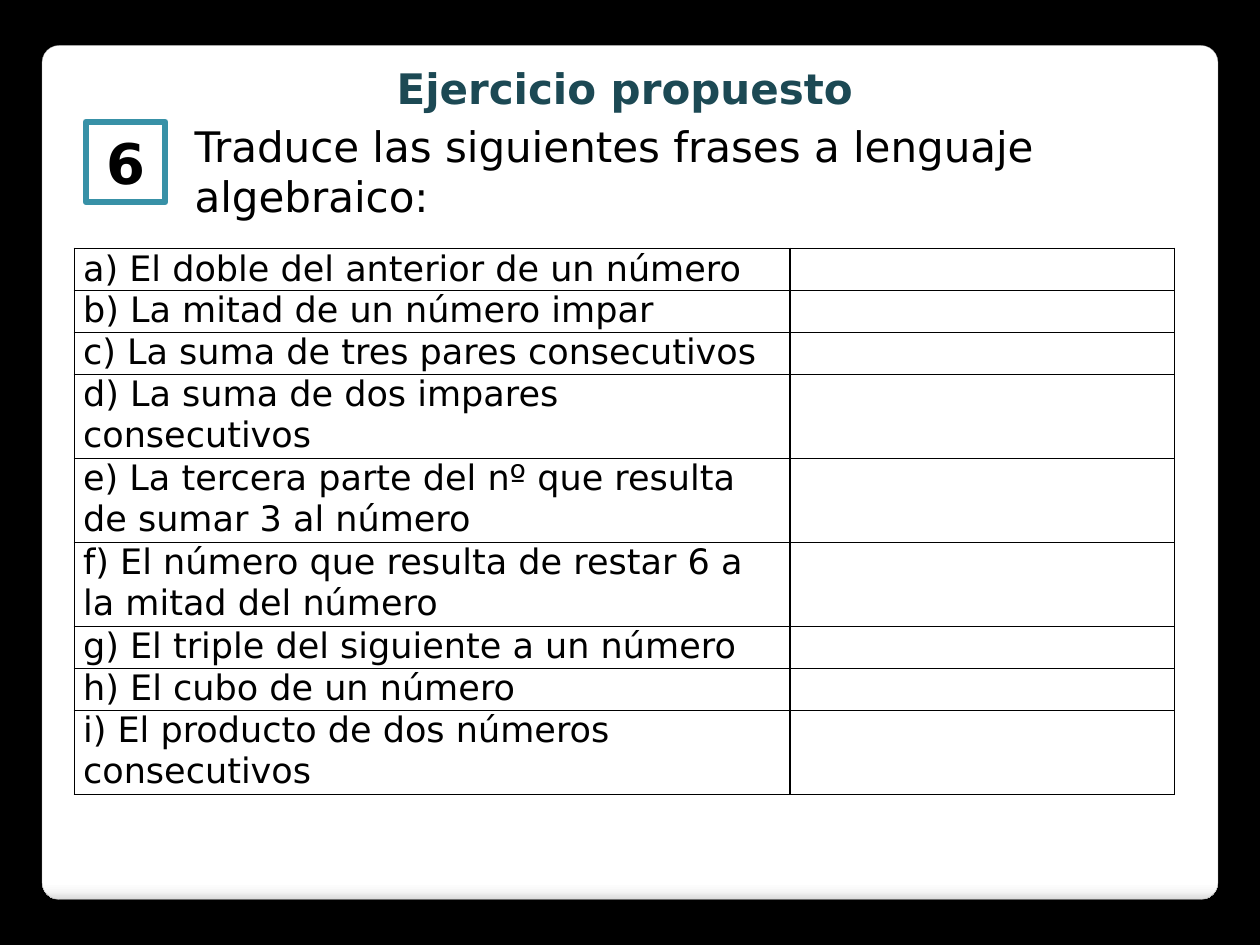
from lxml.etree import SubElement as Sub
from pptx import Presentation
from pptx.dml.color import RGBColor
from pptx.enum.shapes import MSO_SHAPE as Shape
from pptx.enum.text import MSO_ANCHOR as Anchor, MSO_AUTO_SIZE as AutoSize, PP_ALIGN as Align
from pptx.oxml.ns import qn
from pptx.util import Pt

BLACK, WHITE, TEAL, DARK_TEAL = "000000", "FFFFFF", "3891A7", "1C4954"

PHRASES = [
    "a) El doble del anterior de un número",
    "b) La mitad de un número impar",
    "c) La suma de tres pares consecutivos",
    "d) La suma de dos impares consecutivos",
    "e) La tercera parte del nº que resulta de sumar 3 al número",
    "f) El número que resulta de restar 6 a la mitad del número",
    "g) El triple del siguiente a un número",
    "h) El cubo de un número",
    "i) El producto de dos números consecutivos",
]
TWO_LINES = "defi"
LINE_HEIGHT = 24


def color(value):
    return RGBColor.from_string(value)


def place(box, left, top, width, height):
    box.left, box.top, box.width, box.height = map(Pt, (left, top, width, height))


def write(frame, text, size=24, ink=BLACK, bold=False, align=Align.LEFT, space=0):
    frame.word_wrap = True
    para = frame.paragraphs[0]
    para.alignment = align
    para.space_before = para.space_after = Pt(space)
    span = para.add_run()
    span.text = text
    span.font.name, span.font.size, span.font.bold = "DejaVu Sans", Pt(size), bold
    span.font.color.rgb = color(ink)
    return para


class Builder:
    def __init__(self, deck):
        self.page = deck.slides.add_slide(deck.slide_layouts[1])
        background = self.page.background.fill
        background.solid()
        background.fore_color.rgb = color(BLACK)

    def shape(self, kind, frame, line, weight):
        box = self.page.shapes.add_shape(kind, *map(Pt, frame))
        box.shadow.inherit = False
        box.fill.solid()
        box.fill.fore_color.rgb = color(WHITE)
        box.line.color.rgb = color(line)
        box.line.width = Pt(weight)
        return box

    def panel(self, frame, stops):
        box = self.shape(Shape.ROUNDED_RECTANGLE, frame, "A4A4A4", 0.16)
        box.adjustments[0] = 0.02
        # Vertical gradient with more stops than the default two
        box.fill.gradient()
        box.fill.gradient_angle = 270
        stop_list = box._element.spPr.find(qn("a:gradFill")).find(qn("a:gsLst"))
        for old in list(stop_list):
            stop_list.remove(old)
        for percent, value in stops:
            stop = Sub(stop_list, qn("a:gs"), pos=str(percent * 1000))
            Sub(stop, qn("a:srgbClr"), val=value)
        # Send behind the placeholders
        self.page.shapes._spTree.insert(2, box._element)

    def badge(self, text, frame):
        box = self.shape(Shape.RECTANGLE, frame, TEAL, 3.35)
        box.text_frame.vertical_anchor = Anchor.MIDDLE
        write(box.text_frame, text, size=32, bold=True, align=Align.CENTER)

    def placeholder(self, index, text, frame, anchor, **style):
        box = self.page.placeholders[index]
        place(box, *frame)
        box.text_frame.auto_size = AutoSize.NONE
        box.text_frame.vertical_anchor = anchor
        para = write(box.text_frame, text, **style)
        props = para._p.get_or_add_pPr()
        props.set("marL", "0")
        props.set("indent", "0")
        Sub(props, qn("a:buNone"))

    def table(self, phrases, left, top, widths):
        heights = [LINE_HEIGHT * (2 if text[0] in TWO_LINES else 1) for text in phrases]
        grid = self.page.shapes.add_table(
            len(phrases), len(widths),
            *map(Pt, (left, top, sum(widths), sum(heights)))).table
        grid.first_row = grid.horz_banding = False
        for column, width in zip(grid.columns, widths):
            column.width = Pt(width)
        for row, height, text in zip(grid.rows, heights, phrases):
            row.height = Pt(height)
            for cell in row.cells:
                self.style_cell(cell)
            write(row.cells[0].text_frame, text, size=20, space=0.3)

    def style_cell(self, cell):
        cell.margin_left = cell.margin_right = Pt(5)
        cell.margin_top = cell.margin_bottom = 0
        props = cell._tc.get_or_add_tcPr()
        for side in ("lnL", "lnR", "lnT", "lnB"):
            border = Sub(props, qn(f"a:{side}"), w=str(Pt(1)))
            Sub(Sub(border, qn("a:solidFill")), qn("a:srgbClr"), val=BLACK)
        cell.fill.background()


def main():
    deck = Presentation()
    deck.slide_width, deck.slide_height = Pt(720), Pt(540)
    slide = Builder(deck)

    # White card on black
    slide.panel((24, 26, 672, 488),
                [(0, WHITE), (98, WHITE), (99, "F7F7F7"), (100, "DADADA")])

    # Heading and statement
    slide.placeholder(0, "Ejercicio propuesto", (25, 32, 664, 36), Anchor.MIDDLE,
                      ink=DARK_TEAL, bold=True, align=Align.CENTER)
    slide.badge("6", (49, 69.5, 45.5, 46))
    slide.placeholder(1, "Traduce las siguientes frases a lenguaje algebraico:",
                      (104, 65, 567, 66), Anchor.TOP)

    # Phrases with room for the answers
    slide.table(PHRASES, 42.5, 142, (409, 219.6))

    deck.save("out.pptx")


if __name__ == "__main__":
    main()
